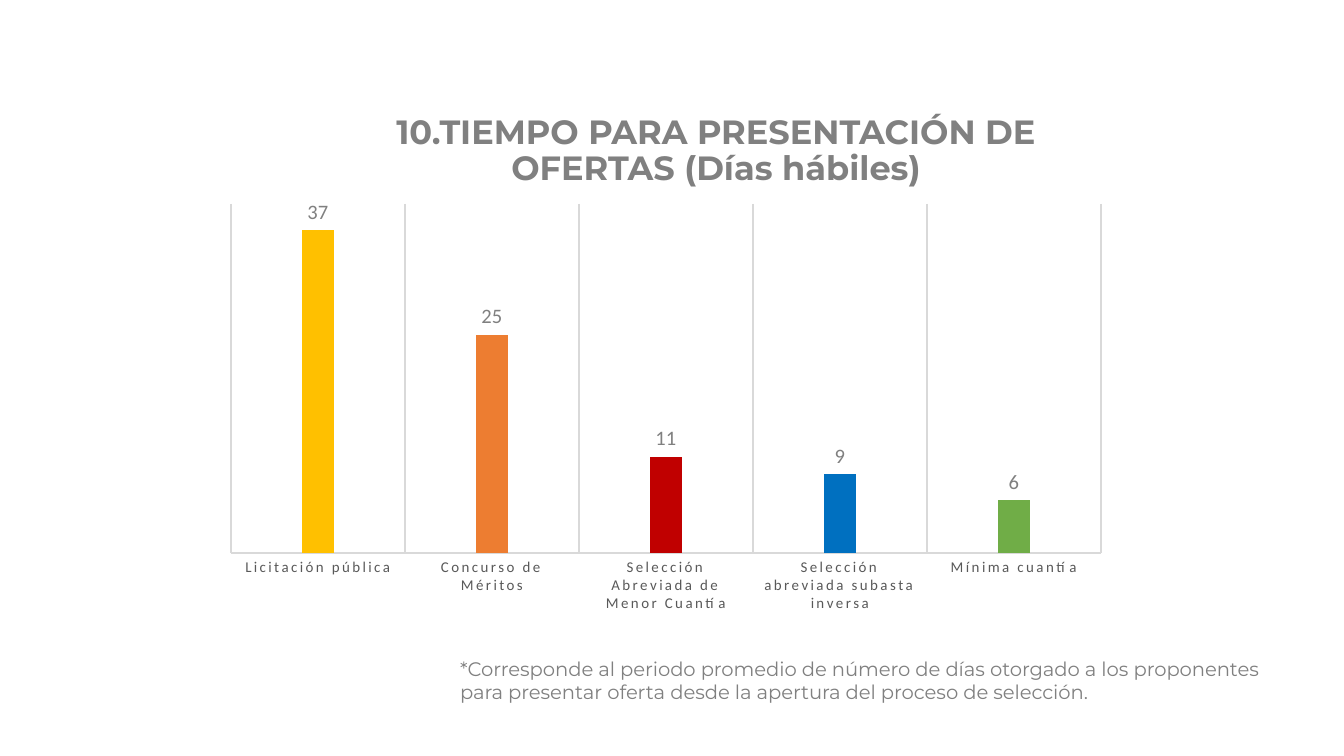
from dataclasses import dataclass

from lxml import etree
from pptx import Presentation
from pptx import util as u
from pptx.chart.data import CategoryChartData
from pptx.dml.color import RGBColor
from pptx.enum import chart as ch, text
from pptx.oxml import parse_xml
from pptx.oxml.ns import nsdecls

PX = 914400 / 134.4


@dataclass(frozen=True)
class Theme:
    gray: str = "808080"
    label: str = "595959"
    rule: str = "D9D9D9"
    heading_font: str = "Montserrat"
    chart_font: str = "Calibri"
    title_size: float = 18
    note_size: float = 10.5
    value_size: float = 11
    category_size: float = 8


@dataclass(frozen=True)
class Box:
    left: int
    top: int
    width: int
    height: int

    def emu(self) -> tuple:
        return tuple(px(n) for n in (self.left, self.top, self.width, self.height))


@dataclass(frozen=True)
class Bar:
    name: str
    days: int
    color: str


@dataclass(frozen=True)
class TextBlock:
    box: Box
    words: str
    size: float
    bold: bool = False
    align: text.PP_ALIGN = text.PP_ALIGN.LEFT
    anchor: text.MSO_ANCHOR = text.MSO_ANCHOR.TOP
    line_spacing: float = 1.0
    insets: tuple = (13, 7, 13, 7)  # left, top, right, bottom


THEME = Theme()
BARS = [
    Bar("Licitación pública", 37, "FFC000"),
    Bar("Concurso de Méritos", 25, "ED7D31"),
    Bar("Selección Abreviada de Menor Cuantía", 11, "C00000"),
    Bar("Selección abreviada subasta inversa", 9, "0070C0"),
    Bar("Mínima cuantía", 6, "70AD47"),
]
CHART = Box(214, 196, 906, 426)
PLOT = Box(231, 204, 870, 349)
TITLE = TextBlock(
    Box(360, 134, 712, 71), "10.TIEMPO PARA PRESENTACIÓN DE OFERTAS (Días hábiles)",
    THEME.title_size, True, text.PP_ALIGN.CENTER, text.MSO_ANCHOR.MIDDLE, 0.9,
    (8, 4, 8, 40))
NOTE = TextBlock(
    Box(447, 650, 836, 61),
    "*Corresponde al periodo promedio de número de días otorgado a los proponentes "
    "para presentar oferta desde la apertura del proceso de selección.",
    THEME.note_size)


def px(n: int) -> u.Emu:
    return u.Emu(round(n * PX))


def rgb(color: str) -> RGBColor:
    return RGBColor.from_string(color)


def style_font(font, name: str, size: float, color: str) -> None:
    font.name = name
    font.size = u.Pt(size)
    font.color.rgb = rgb(color)


def style_line(line) -> None:
    line.color.rgb = rgb(THEME.rule)
    line.width = u.Pt(0.75)


def add_text(s, block: TextBlock) -> None:
    tf = s.shapes.add_textbox(*block.box.emu()).text_frame
    tf.word_wrap = True
    tf.vertical_anchor = block.anchor
    tf.margin_left, tf.margin_top, tf.margin_right, tf.margin_bottom = map(px, block.insets)
    p = tf.paragraphs[0]
    p.alignment = block.align
    p.line_spacing = block.line_spacing
    r = p.add_run()
    r.text = block.words
    r.font.bold = block.bold
    style_font(r.font, THEME.heading_font, block.size, THEME.gray)


def place_plot(chart, outer: Box, inner: Box) -> None:
    """Fix the inner plot area as fractions of the chart frame."""
    parts = {
        "x": (inner.left - outer.left) / outer.width,
        "y": (inner.top - outer.top) / outer.height,
        "w": inner.width / outer.width,
        "h": inner.height / outer.height,
    }
    modes = '<c:layoutTarget val="inner"/><c:xMode val="edge"/><c:yMode val="edge"/>'
    sizes = "".join(f'<c:{k} val="{v:.4f}"/>' for k, v in parts.items())
    layout = parse_xml(f'<c:layout {nsdecls("c")}><c:manualLayout>{modes}{sizes}'
                       '</c:manualLayout></c:layout>')
    area = chart.plots[0]._element.getparent()
    for old in area.findall(layout.tag):
        area.remove(old)
    area.insert(0, layout)


def add_bars(s, bars: list[Bar]) -> None:
    data = CategoryChartData(number_format="0")
    data.categories = [b.name for b in bars]
    data.add_series("Series 1", [b.days for b in bars])
    chart = s.shapes.add_chart(ch.XL_CHART_TYPE.COLUMN_CLUSTERED, *CHART.emu(), data).chart
    chart.has_legend = False
    chart.has_title = False
    style_font(chart.font, THEME.chart_font, 10, "000000")

    plot = chart.plots[0]
    plot.vary_by_categories = False
    plot.gap_width, plot.overlap = 444, -90
    plot.has_data_labels = True
    labels = plot.data_labels
    labels.show_value = True
    labels.number_format, labels.number_format_is_linked = "0", False
    labels.position = ch.XL_LABEL_POSITION.OUTSIDE_END
    style_font(labels.font, THEME.chart_font, THEME.value_size, THEME.gray)
    for i, bar in enumerate(bars):
        fill = plot.series[0].points[i].format.fill
        fill.solid()
        fill.fore_color.rgb = rgb(bar.color)

    values = chart.value_axis
    values.minimum_scale, values.maximum_scale = 0, 40
    values.has_major_gridlines = False
    values.visible = False
    cats = chart.category_axis
    cats.major_tick_mark = ch.XL_TICK_MARK.NONE
    cats.has_major_gridlines = True
    style_line(cats.major_gridlines.format.line)
    style_line(cats.format.line)
    style_font(cats.tick_labels.font, THEME.chart_font, THEME.category_size, THEME.label)
    for props in cats._element.iter("{*}defRPr"):
        props.set("spc", "120")
    place_plot(chart, CHART, PLOT)


def main() -> None:
    prs = Presentation()
    prs.slide_width, prs.slide_height = px(1344), px(756)
    s = prs.slides.add_slide(prs.slide_layouts[6])
    add_text(s, TITLE)
    add_bars(s, BARS)
    add_text(s, NOTE)
    prs.save("out.pptx")


if __name__ == "__main__":
    main()
